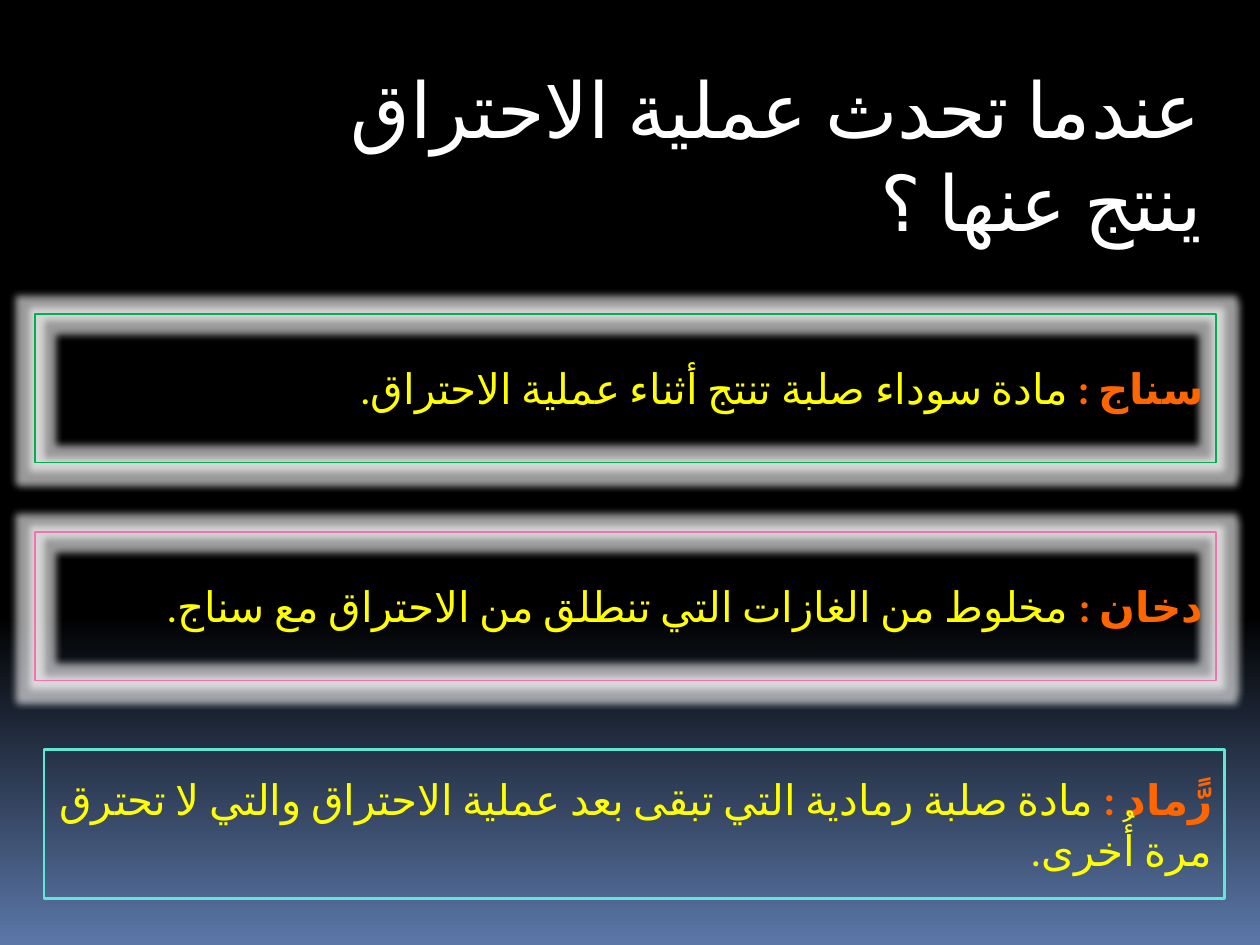
from lxml import etree
from pptx import Presentation, util as u
from pptx.dml.color import RGBColor
from pptx.enum import lang, shapes, text
from pptx.oxml.ns import qn

HUES = {
    "black": "000000", "blue": "5B77A8", "white": "FFFFFF",
    "term": "FF6600", "body": "FFFF00",
    "green": "00B050", "pink": "F273AF", "aqua": "5FE8D6",
}


def hue(name):
    return RGBColor.from_string(HUES[name])


def write(para, words, size=24, color="body", bold=False, face="Calibri"):
    run = para.add_run()
    run.text = words
    run.font.size = u.Pt(size)
    run.font.name = face
    run.font.bold = bold
    run.font.language_id = lang.MSO_LANGUAGE_ID.ARABIC
    run.font.color.rgb = hue(color)
    etree.SubElement(run._r.rPr, qn("a:cs"), typeface=face)


class Deck:
    def __init__(self, wide, high):
        self.show = Presentation()
        self.show.slide_width = u.Inches(wide)
        self.show.slide_height = u.Inches(high)
        self.slide = self.show.slides.add_slide(self.show.slide_layouts[5])

    def shade(self, start, end, begin):
        fill = self.slide.background.fill
        fill.gradient()
        fill.gradient_angle = 270
        for stop, name, place in zip(fill.gradient_stops, (start, end), (begin, 1)):
            stop.color.rgb = hue(name)
            stop.position = place

    def place(self, shape, left, top, wide, high):
        shape.left, shape.top = u.Inches(left), u.Inches(top)
        shape.width, shape.height = u.Inches(wide), u.Inches(high)

    def para(self, frame, anchor):
        frame.word_wrap = True
        frame.vertical_anchor = anchor
        para = frame.paragraphs[0]
        para.alignment = text.PP_ALIGN.RIGHT
        para._p.get_or_add_pPr().set("rtl", "1")
        return para

    def title(self, words, *area):
        shape = self.slide.shapes.title
        self.place(shape, *area)
        para = self.para(shape.text_frame, text.MSO_ANCHOR.TOP)
        shape.text_frame.auto_size = text.MSO_AUTO_SIZE.SHAPE_TO_FIT_TEXT
        write(para, words, size=44, color="white")

    def box(self, term, words, left, top, line, weight, halo):
        area = [u.Inches(n) for n in (left, top, 9.37, 1.18)]
        shape = self.slide.shapes.add_shape(shapes.MSO_SHAPE.RECTANGLE, *area)
        shape.shadow.inherit = False
        shape.fill.background()
        shape.line.color.rgb = hue(line)
        shape.line.width = u.Pt(weight)
        if halo:
            self.halo(shape)
        para = self.para(shape.text_frame, text.MSO_ANCHOR.MIDDLE)
        write(para, term + " : ", color="term", bold=True)
        write(para, words)

    def halo(self, shape):
        effects = shape._element.spPr.find(qn("a:effectLst"))
        glow = etree.SubElement(effects, qn("a:glow"), rad=str(u.Pt(8)))
        tint = etree.SubElement(glow, qn("a:srgbClr"), val=HUES["white"])
        etree.SubElement(tint, qn("a:alpha"), val="60000")


def main():
    deck = Deck(10, 7.5)
    deck.shade("black", "blue", 0.65)
    deck.title("عندما تحدث عملية الاحتراق ينتج عنها ؟", 1.77, 0.44, 7.87, 1.58)
    terms = [
        ("دخان", "مخلوط من الغازات التي تنطلق من الاحتراق مع سناج.",
         0.28, 4.22, "pink", 0.94, True),
        ("سناج", "مادة سوداء صلبة تنتج أثناء عملية الاحتراق.",
         0.28, 2.49, "green", 0.94, True),
        ("رًّماد", "مادة صلبة رمادية التي تبقى بعد عملية الاحتراق والتي لا تحترق مرة أُخرى.",
         0.35, 5.95, "aqua", 1.5, False),
    ]
    for term in terms:
        deck.box(*term)
    deck.show.save("out.pptx")


if __name__ == "__main__":
    main()
